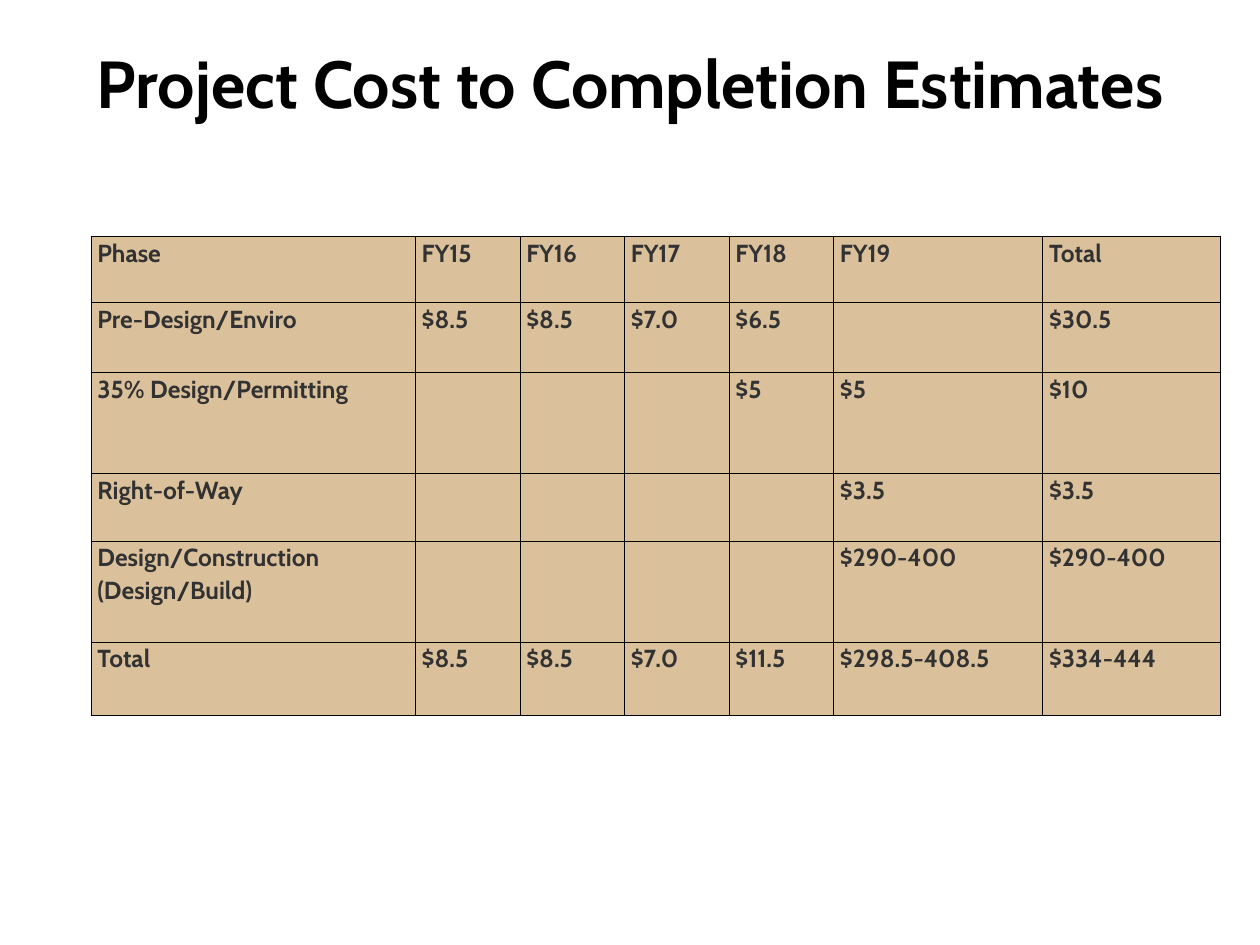
from dataclasses import dataclass

from lxml import etree
from pptx import Presentation
from pptx import util as u
from pptx.dml.color import RGBColor
from pptx.enum import text
from pptx.oxml import ns


@dataclass(frozen=True)
class Theme:
    font: str = "Cabin"
    title_size: int = 54
    cell_size: int = 20
    title_color: str = "000000"
    cell_color: str = "323232"
    cell_fill: str = "DAC19B"
    border: str = "000000"
    border_width: int = 1


THEME = Theme()

COLUMN_WIDTHS = [3.66, 1.18, 1.18, 1.18, 1.18, 2.36, 2.01]
ROW_HEIGHTS = [0.75, 0.79, 1.14, 0.76, 1.14, 0.83]
COSTS = [
    ["Phase", "FY15", "FY16", "FY17", "FY18", "FY19", "Total"],
    ["Pre-Design/Enviro", "$8.5", "$8.5", "$7.0", "$6.5", "", "$30.5"],
    ["35% Design/Permitting", "", "", "", "$5", "$5", "$10"],
    ["Right-of-Way", "", "", "", "", "$3.5", "$3.5"],
    ["Design/Construction (Design/Build)", "", "", "", "", "$290-400", "$290-400"],
    ["Total", "$8.5", "$8.5", "$7.0", "$11.5", "$298.5-408.5", "$334-444"],
]


def write(tf, content, *, size, color, align, spacing=1.0):
    tf.word_wrap = True
    p = tf.paragraphs[0]
    p.alignment = align
    p.line_spacing = spacing
    p.font.size = u.Pt(size)
    if content:
        r = p.add_run()
        r.text = content
        r.font.name = THEME.font
        r.font.size = u.Pt(size)
        r.font.bold = True
        r.font.color.rgb = RGBColor.from_string(color)


def add_borders(cell):
    tc_pr = cell._tc.get_or_add_tcPr()
    for i, side in enumerate(("lnL", "lnR", "lnT", "lnB")):
        ln = etree.Element(ns.qn(f"a:{side}"), w=str(u.Pt(THEME.border_width)))
        fill = etree.SubElement(ln, ns.qn("a:solidFill"))
        etree.SubElement(fill, ns.qn("a:srgbClr"), val=THEME.border)
        tc_pr.insert(i, ln)


def add_title(slide, left, top, width, height):
    sp = slide.shapes.add_textbox(*map(u.Inches, (left, top, width, height)))
    sp.text_frame.vertical_anchor = text.MSO_ANCHOR.TOP
    write(sp.text_frame, "Project Cost to Completion Estimates",
          size=THEME.title_size, color=THEME.title_color,
          align=text.PP_ALIGN.CENTER)


def add_cost_table(slide, left, top):
    box = (left, top, sum(COLUMN_WIDTHS), sum(ROW_HEIGHTS))
    table = slide.shapes.add_table(len(COSTS), len(COSTS[0]),
                                   *map(u.Inches, box)).table
    table.first_row = table.horz_banding = False
    for column, width in zip(table.columns, COLUMN_WIDTHS):
        column.width = u.Inches(width)
    for row, height, values in zip(table.rows, ROW_HEIGHTS, COSTS):
        row.height = u.Inches(height)
        for cell, value in zip(row.cells, values):
            cell.margin_left = cell.margin_right = u.Inches(0.07)
            cell.margin_top = cell.margin_bottom = 0
            cell.fill.solid()
            cell.fill.fore_color.rgb = RGBColor.from_string(THEME.cell_fill)
            add_borders(cell)
            write(cell.text_frame, value, size=THEME.cell_size,
                  color=THEME.cell_color, align=text.PP_ALIGN.LEFT, spacing=1.07)


def main():
    prs = Presentation()
    prs.slide_width, prs.slide_height = u.Inches(14.22), u.Inches(10.67)
    slide = prs.slides.add_slide(prs.slide_layouts[6])
    add_title(slide, 0.71, 0.43, 12.8, 1.99)
    add_cost_table(slide, 1.03, 2.67)
    prs.save("out.pptx")


if __name__ == "__main__":
    main()
